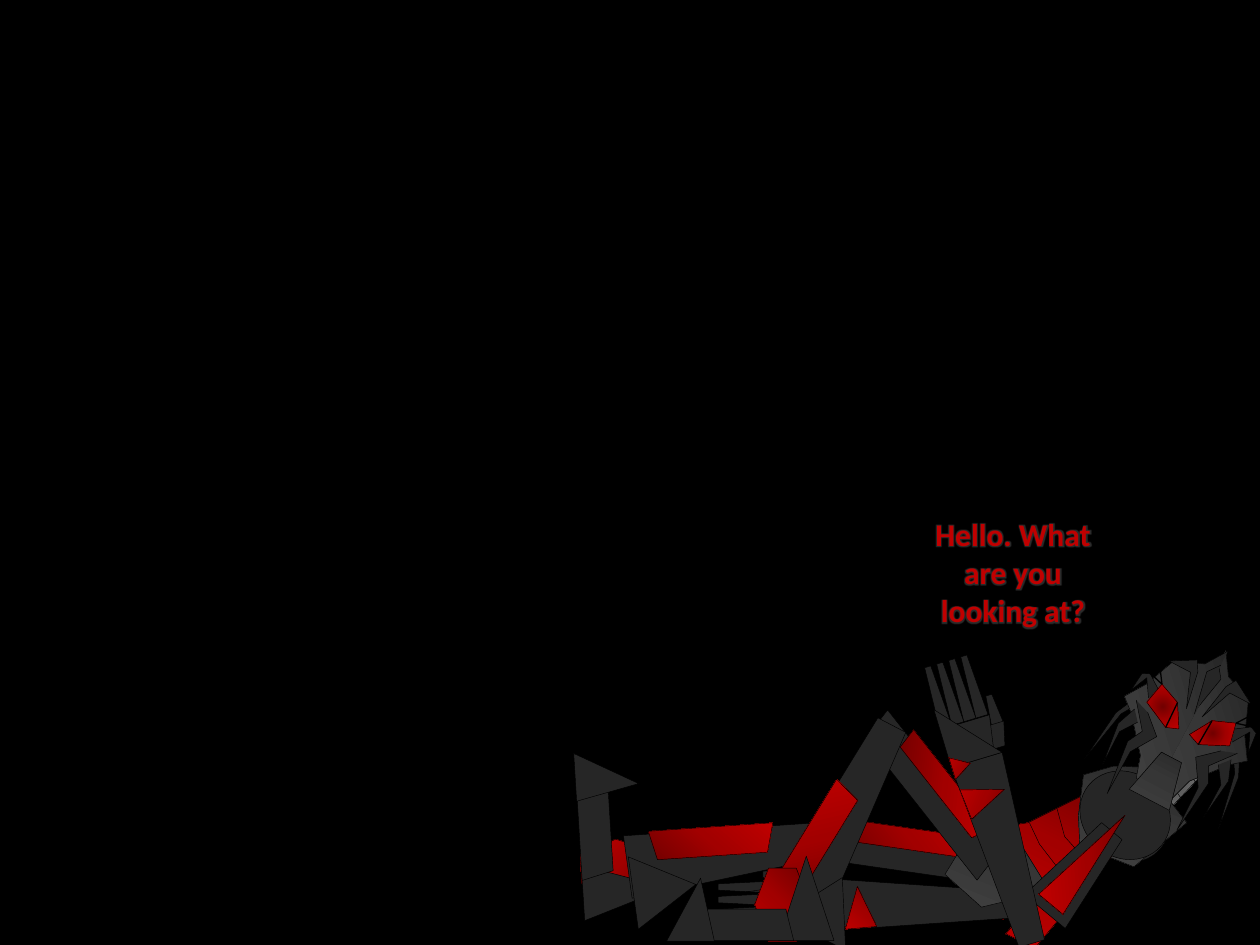
from math import atan2, cos, radians, sin
from lxml import etree
from pptx import Presentation
from pptx.dml.color import RGBColor
from pptx.enum.shapes import MSO_CONNECTOR, MSO_SHAPE
from pptx.enum.text import MSO_ANCHOR, PP_ALIGN
from pptx.oxml import parse_xml
from pptx.oxml.ns import nsdecls, qn
from pptx.util import Cm, Pt

INCH = 2.54
DARK = ("262626",)
RED = ("720000", "A20000", "C00000")
STEEL = ("262626", "363636", "404040")
GREY = ("4C4C4C", "6B6B6B", "808080")
TRAPEZOID, TRIANGLE = MSO_SHAPE.TRAPEZOID, MSO_SHAPE.ISOSCELES_TRIANGLE


def paint(shape, colours, angle=None):
    shape.shadow.inherit = False
    shape.line.color.rgb = RGBColor.from_string("000000")
    shape.line.width = Pt(0.25)
    shape.fill.background()
    if len(colours) == 1:
        shape.fill.solid()
        shape.fill.fore_color.rgb = RGBColor.from_string(colours[0])
    elif colours:
        stops = "".join(f'<a:gs pos="{i * 50000}"><a:srgbClr val="{colour}"/></a:gs>'
                        for i, colour in enumerate(colours))
        shade = ('<a:path path="circle"><a:fillToRect l="50000" t="50000" r="50000" b="50000"/></a:path>'
                 if angle is None else f'<a:lin ang="{angle * 60000}" scaled="0"/>')
        empty = shape._element.spPr.find(qn("a:noFill"))
        empty.getparent().replace(empty, parse_xml(
            f'<a:gradFill {nsdecls("a")} rotWithShape="1"><a:gsLst>{stops}</a:gsLst>{shade}</a:gradFill>'))


def mirror(points):
    (crown_x, crown_y), (chin_x, chin_y) = (9.74, 5.16), (9.15, 6.28)
    twice = 2 * atan2(chin_y - crown_y, chin_x - crown_x)
    return [(crown_x + (x - crown_x) * cos(twice) + (y - crown_y) * sin(twice),
             crown_y + (x - crown_x) * sin(twice) - (y - crown_y) * cos(twice)) for x, y in points]


limbs = {
    "upper arm": [(MSO_SHAPE.PARALLELOGRAM, 0, 0.54, 1.58, 0.25, -90, RED),
                  (MSO_SHAPE.OVAL, 0, 0, 0.75, 0.67, 0, DARK),
                  (TRAPEZOID, 0, 0.58, 0.42, 0.83, 0, DARK),
                  (TRIANGLE, 0, 0.46, 0.25, 0.92, 0, RED)],
    "forearm": [(TRAPEZOID, 0, 0, 0.42, 1.52, 0, DARK),
                (TRIANGLE, 0, 1, 0.42, 0.48, 0, DARK, 0),
                (TRIANGLE, 0.02, 0.46, 0.25, 0.33, 265, RED),
                (TRIANGLE, 0.13, 0.75, 0.18, 0.15, 270, RED)],
    "hand": [(TRAPEZOID, -0.24, 1.1, 0.1, 0.25, 180, DARK),
             (TRAPEZOID, -0.13, 0.9, 0.33, 0.19, 0, DARK),
             (TRAPEZOID, 0, 0.91, 0.4, 0.33, 0, DARK, 0.17),
             *[(TRAPEZOID, 0.1 * i - 0.14, 1.33, 0.1, 0.5, 180, DARK) for i in range(4)]],
    "thigh": [(MSO_SHAPE.PARALLELOGRAM, 0, 0, 1.5, 0.28, 0, DARK),
              (TRAPEZOID, 0, -0.12, 1, 0.17, 180, RED)],
    "shin": [(TRAPEZOID, 0, 0, 0.5, 1.77, 0, DARK),
             (TRIANGLE, 0.21, 0.62, 0.58, 0.5, 0, DARK),
             (TRAPEZOID, -0.11, 0.2, 0.99, 0.23, 94, RED)],
    "foot": [(MSO_SHAPE.HEXAGON, 0, 0, 0.44, 0.58, 0, RED),
             (TRIANGLE, 0.19, -0.05, 0.44, 0.67, 0, DARK),
             (TRAPEZOID, -0.29, 0.16, 0.76, 0.25, 0, DARK),
             (TRIANGLE, -0.73, 0.04, 0.38, 0.5, 0, DARK, 0.29)],
    "neck": [(TRAPEZOID, 0, 0, 0.42, 0.5, 0, GREY)],
    "muzzle": [(TRAPEZOID, 0, 0, 0.36, 0.38, 0, STEEL)],
}

half_head = [
    (DARK, [(9.84, 5.96), (9.83, 6.17), (9.67, 6.58), (9.8, 6.14), (9.79, 6.02)]),
    (STEEL, [(9.73, 5.16), (9.75, 5.37), (9.91, 5.55), (9.88, 5.84), (9.9, 6.04), (9.76, 6.07),
             (9.44, 6.2), (9.31, 6.33), (9.15, 6.27)]),
    (DARK, [(9.69, 5.96), (9.49, 6.01), (9.51, 6.25), (9.34, 6.59), (9.59, 6.22), (9.59, 6.08),
            (9.82, 5.98)]),
    (DARK, [(9.47, 5.66), (9.69, 5.39), (9.67, 5.27)]),
    (DARK, [(9.54, 5.69), (9.76, 5.5), (9.93, 5.59), (9.81, 5.4), (9.73, 5.45), (9.54, 5.69)]),
    (DARK, [(9.78, 5.89), (9.92, 5.81), (9.91, 5.97), (9.97, 5.82), (9.93, 5.77), (9.77, 5.79)]),
    (DARK, [(9.67, 6.07), (9.69, 6.23), (9.55, 6.49), (9.75, 6.2), (9.77, 6.03)]),
]
eye = [(9.62, 5.72), (9.81, 5.74), (9.76, 5.92), (9.51, 5.91), (9.44, 5.83), (9.62, 5.72)]
lashes = [[eye[3], eye[0]], [eye[1], (9.99, 5.78)], [eye[1], (10, 5.64)]]

figure = [
    ("upper arm", 8.94, 6.48, 55.8), ("forearm", 7.28, 7.18, 90), ("hand", 7.28, 7.18, 90),
    ("neck", 9.28, 6.2, 55),
    *[("line", 0.25, seam) for seam in ([(9.37, 6.33), (9.19, 6.07)], [(9.25, 6.45), (9.02, 6.13)],
                                        [(9.49, 6.21), (9.34, 6)])],
    ("thigh", 7.22, 6.78, 8.2), ("line", 0.25, [(5.02, 6.78), (4.9, 6.22)]),
    ("foot", 4.9, 6.88, 86.5), ("shin", 5.86, 6.76, 82.1),
    ("outline", RED, 116, [(8.94, 6.79), (8.74, 6.24), (8.16, 6.53), (7.78, 6.59), (8.06, 7.11),
                           (8.55, 6.85), (8.94, 6.79)]),
    ("outline", STEEL, 112, [(9.08, 6.09), (9.42, 6.53), (9, 6.88), (8.57, 6.71), (8.56, 6.47),
                             (8.6, 6.15), (8.84, 6.08), (9.08, 6.09)]),
    ("outline", STEEL, 112, [(8.33, 7.07), (7.96, 6.47), (7.69, 6.63), (7.5, 6.94), (7.79, 7.2),
                             (8.33, 7.07)]),
    ("outline", (), None, [(8.63, 6.84), (8.45, 6.64), (8.39, 6.42)]),
    ("outline", (), None, [(8.42, 6.92), (8.25, 6.7), (8.17, 6.53)]),
    ("thigh", 7.4, 6.31, 51.7), ("shin", 6.67, 6.54, 27.5),
    ("line", 0.25, [(6.11, 7.05), (5.54, 7.14)]), ("foot", 6.21, 7.18, 0),
    ("upper arm", 8.93, 6.47, 39.8), ("hand", 7.97, 6.76, 163.3), ("forearm", 7.97, 6.76, 163.3),
    *[("outline", colours, 163, points) for colours, points in half_head],
    *[("outline", colours, 163, mirror(points)) for colours, points in half_head],
    ("muzzle", 9.21, 6.18, 27.7),
    ("outline", RED, None, mirror(eye)), *[("line", 0.75, mirror(lash)) for lash in lashes],
    ("outline", RED, None, eye), *[("line", 0.75, lash) for lash in lashes],
]

deck = Presentation()
deck.slide_width, deck.slide_height = Cm(25.4), Cm(19.05)
slide = deck.slides.add_slide(deck.slide_layouts[6])
slide.background.fill.solid()
slide.background.fill.fore_color.rgb = RGBColor.from_string("000000")

for piece, *details in figure:
    if piece == "line":
        weight, ends = details
        crease = slide.shapes.add_connector(MSO_CONNECTOR.STRAIGHT,
                                            *[Cm(INCH * value) for end in ends for value in end])
        crease.line.color.rgb = RGBColor.from_string("000000")
        crease.line.width = Pt(weight)
        etree.SubElement(crease._element.spPr, qn("a:effectLst"))
    elif piece == "outline":
        colours, angle, points = details
        start, *others = [(Cm(INCH * x), Cm(INCH * y)) for x, y in points]
        contour = slide.shapes.build_freeform(*start)
        contour.add_line_segments(others, close=False)
        paint(contour.convert_to_shape(), colours, angle)
    else:
        joint_x, joint_y, turn = details
        c, s = cos(radians(turn)), sin(radians(turn))
        for preset, x, y, width, height, tilt, colours, *adjustments in limbs[piece]:
            left = joint_x + x * c - y * s - width / 2
            top = joint_y + x * s + y * c - height / 2
            part = slide.shapes.add_shape(preset, *[Cm(INCH * v) for v in (left, top, width, height)])
            part.rotation = (turn + tilt) % 360
            part._element.spPr.xfrm.set("flipH", "1")
            for adjustment in adjustments:
                part.adjustments[0] = adjustment
                if adjustment == 0:
                    part._element.spPr.xfrm.set("flipV", "1")
            paint(part, colours, {RED: 45, STEEL: 90}.get(colours))

speech = slide.shapes.add_shape(MSO_SHAPE.OVAL_CALLOUT, *[Cm(INCH * v) for v in (6.83, 4.08, 2.42, 0.92)])
speech._element.spPr.xfrm.set("flipH", "1")
speech.adjustments[0], speech.adjustments[1] = 0.22, 0.28
paint(speech, ())
speech.line.fill.background()
speech.text_frame.text = "Hello. What are you looking at?"
speech.text_frame.word_wrap = True
speech.text_frame.vertical_anchor = MSO_ANCHOR.MIDDLE
greeting = speech.text_frame.paragraphs[0]
greeting.alignment = PP_ALIGN.CENTER
words = greeting.runs[0]
words.font.name, words.font.size, words.font.bold = "Calibri", Pt(18), True
words.font.color.rgb = RGBColor.from_string("C00000")
letters = words.font._element
letters.insert(0, parse_xml(f'<a:ln {nsdecls("a")} w="12700"><a:solidFill><a:srgbClr val="A6A6A6"/>'
                            '</a:solidFill></a:ln>'))
letters.insert(2, parse_xml(f'<a:effectLst {nsdecls("a")}><a:glow rad="45500"><a:srgbClr val="808080">'
                            '<a:alpha val="35000"/></a:srgbClr></a:glow></a:effectLst>'))
deck.save("out.pptx")
